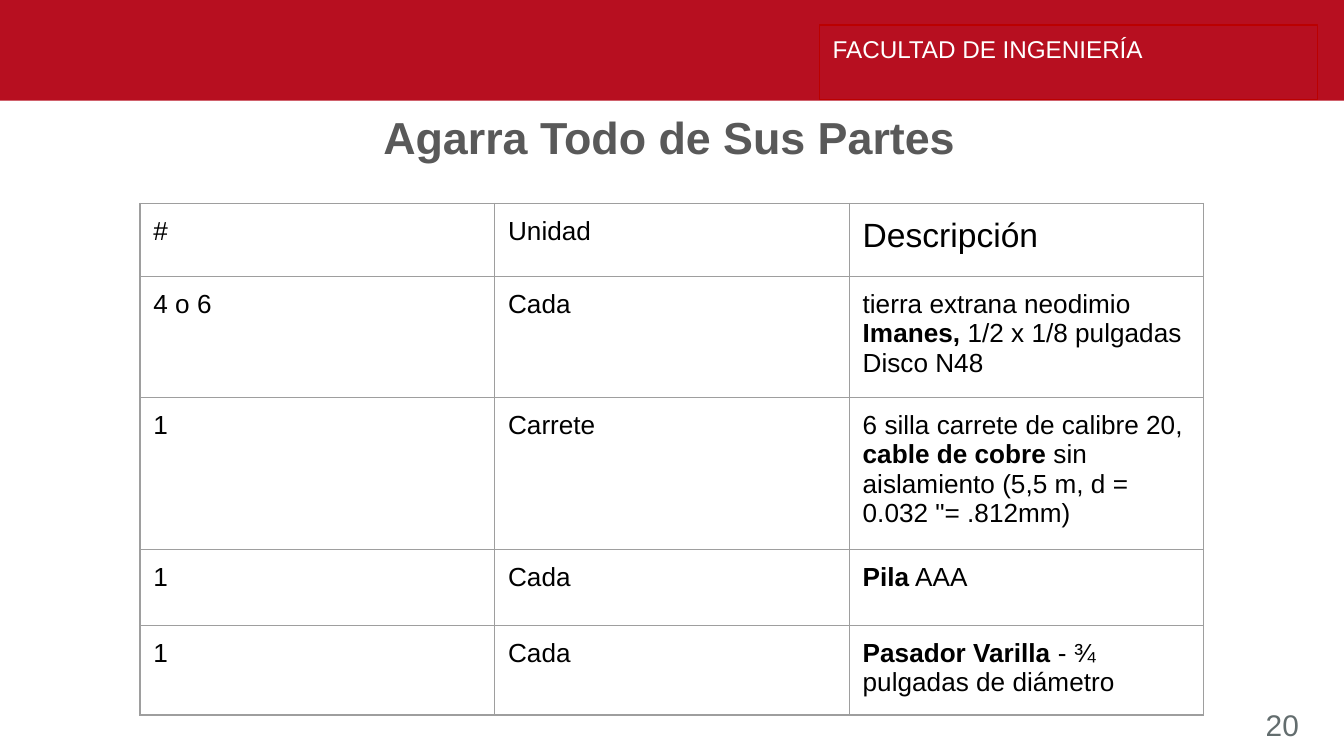
import pptx
import pptx.util
import pptx.dml.color
import pptx.enum.shapes
import pptx.enum.text
import pptx.oxml

Pt = pptx.util.Pt
RGB = pptx.dml.color.RGBColor
ALIGN = pptx.enum.text.PP_ALIGN
TOP = pptx.enum.text.MSO_ANCHOR.TOP
RECT = pptx.enum.shapes.MSO_SHAPE.RECTANGLE

RED = RGB(0xB7, 0x0F, 0x20)
EDGE = RGB(0xBB, 0x00, 0x00)
WHITE = RGB(0xFF, 0xFF, 0xFF)
GRAY = RGB(0x59, 0x59, 0x59)
SLATE = RGB(0x63, 0x6D, 0x6E)
BLACK = RGB(0, 0, 0)
GRID = "9E9E9E"
FONT = "Arial"

# Each cell is a list of (text, bold, size)
HEAD = [[("#", False, 14)], [("Unidad", False, 14)],
        [("Descripción", False, 18)]]
PARTS = [
    ("4 o 6", "Cada", [("tierra extrana neodimio ", False, 14),
                       ("Imanes,", True, 14),
                       (" 1/2 x 1/8 pulgadas Disco N48", False, 14)]),
    ("1", "Carrete", [("6 silla carrete de calibre 20, ", False, 14),
                      ("cable de cobre", True, 14),
                      (" sin aislamiento (5,5 m, d = 0.032 \"= .812mm)",
                       False, 14)]),
    ("1", "Cada", [("Pila", True, 14), (" AAA", False, 14)]),
    ("1", "Cada", [("Pasador Varilla", True, 14),
                   (" - ¾ pulgadas de diámetro", False, 14)]),
]
HEIGHTS = [39, 39, 39, 40.5, 39]


def write(frame, runs, color, align=ALIGN.LEFT, space=None):
    """Fill the first paragraph with (text, bold, size) runs."""
    frame.word_wrap = True
    frame.vertical_anchor = TOP
    par = frame.paragraphs[0]
    par.alignment = align
    if space:
        par.line_spacing = space
    for text, bold, size in runs:
        run = par.add_run()
        run.text = text
        run.font.name = FONT
        run.font.size = Pt(size)
        run.font.bold = bold
        run.font.color.rgb = color


def add_box(slide, box, fill=None, line=None):
    """Add a rectangle with optional fill and outline."""
    shape = slide.shapes.add_shape(RECT, *map(Pt, box))
    shape.shadow.inherit = False
    if fill is None:
        shape.fill.background()
    else:
        shape.fill.solid()
        shape.fill.fore_color.rgb = fill
    if line is None:
        shape.line.fill.background()
    else:
        shape.line.color.rgb = line
        shape.line.width = Pt(0.75)
    return shape


def add_banner(slide, box):
    """Red band with the faculty name at its right end."""
    left, top, width, height = box
    add_box(slide, box, fill=RED)
    label = add_box(slide, (left + width - 281, top + height - 40.5, 267, 40),
                    line=EDGE)
    write(label.text_frame, [("FACULTAD DE INGENIERÍA", False, 13)], WHITE,
          space=1.07)


def add_title(slide, box):
    title = add_box(slide, box, line=WHITE)
    write(title.text_frame,
          [("Agarra Todo de Sus Partes", True, 24), (" ", False, 11)],
          GRAY, ALIGN.CENTER, 0.75)


def add_number(slide, box):
    number = slide.shapes.add_textbox(*map(Pt, box))
    write(number.text_frame, [("20", False, 16)], SLATE)


def set_edges(cell):
    """Draw a thin line on all four sides of a cell."""
    props = cell._tc.get_or_add_tcPr()
    for at, side in enumerate(("lnL", "lnR", "lnT", "lnB")):
        props.insert(at, pptx.oxml.parse_xml(
            f'<a:{side} xmlns:a="http://schemas.openxmlformats.org/'
            f'drawingml/2006/main" w="{Pt(0.75)}"><a:solidFill>'
            f'<a:srgbClr val="{GRID}"/></a:solidFill></a:{side}>'))


def add_parts(slide, box):
    """Table of parts; rows grow with their text."""
    rows = [HEAD] + [[[(count, False, 14)], [(unit, False, 14)], about]
                     for count, unit, about in PARTS]
    table = slide.shapes.add_table(len(rows), len(HEAD), *map(Pt, box)).table
    table.first_row = False
    table.horz_banding = False
    for col in table.columns:
        col.width = Pt(box[2] / len(HEAD))
    for row, height, cells in zip(table.rows, HEIGHTS, rows):
        row.height = Pt(height)
        for cell, runs in zip(row.cells, cells):
            cell.fill.background()
            cell.margin_left = cell.margin_right = Pt(7.2)
            cell.margin_top = cell.margin_bottom = Pt(7.2)
            write(cell.text_frame, runs, BLACK)
            set_edges(cell)


def main():
    deck = pptx.Presentation()
    deck.slide_width, deck.slide_height = Pt(720), Pt(405)
    slide = deck.slides.add_slide(deck.slide_layouts[6])
    add_banner(slide, (0, 0, 720, 54))
    add_number(slide, (671, 375, 34.5, 20))
    add_title(slide, (139.7, 62, 440.6, 37.5))
    add_parts(slide, (75, 109, 570, sum(HEIGHTS)))
    deck.save("out.pptx")


if __name__ == "__main__":
    main()
